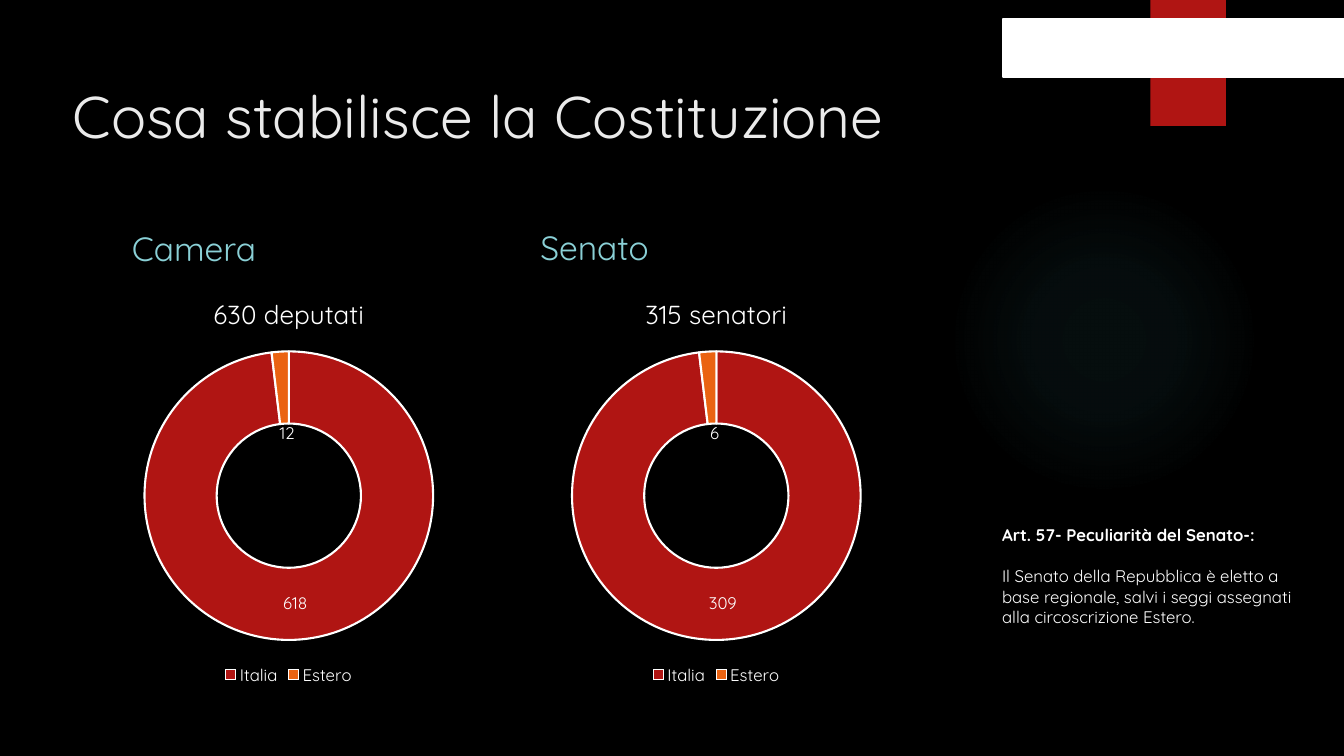
import pptx
import pptx.util
import pptx.oxml
import pptx.oxml.ns
import pptx.dml.color
import pptx.chart.data
import pptx.enum.chart
import pptx.enum.shapes
import pptx.enum.text

Inches = pptx.util.Inches
Pt = pptx.util.Pt
SHAPE = pptx.enum.shapes.MSO_SHAPE
ANCHOR = pptx.enum.text.MSO_ANCHOR
CHART_NS = pptx.oxml.ns.nsdecls("c")


def rgb(value):
    return pptx.dml.color.RGBColor.from_string(value)


class ConstitutionSlide:
    """Draws the elements of one dark slide in a shared style."""

    FONT = "Quicksand"
    WHITE, RED, ORANGE, TEAL, GLOW = "FFFFFF", "B01513", "EA6312", "8AD0D6", "50B9C1"

    def __init__(self, presentation):
        self.slide = presentation.slides.add_slide(presentation.slide_layouts[5])
        background = self.slide.background.fill
        background.solid()
        background.fore_color.rgb = rgb("000000")

    def style(self, font, size, color, bold=False):
        font.name, font.size, font.bold = self.FONT, Pt(size), bold
        font.color.rgb = rgb(color)

    def title(self, text, left, top, width, height):
        title = self.slide.shapes.title
        title.left, title.top = Inches(left), Inches(top)
        title.width, title.height = Inches(width), Inches(height)
        frame = title.text_frame
        frame.text = text
        frame.auto_size = pptx.enum.text.MSO_AUTO_SIZE.NONE
        frame.vertical_anchor = ANCHOR.TOP
        frame.paragraphs[0].alignment = pptx.enum.text.PP_ALIGN.LEFT
        self.style(frame.paragraphs[0].font, 42, "EBEBEB")

    def shape(self, kind, left, top, width, height, color):
        shape = self.slide.shapes.add_shape(
            kind, Inches(left), Inches(top), Inches(width), Inches(height))
        shape.shadow.inherit = False
        shape.fill.solid()
        shape.fill.fore_color.rgb = rgb(color)
        shape.line.fill.background()
        return shape

    def glow(self, left, top, size):
        circle = self.shape(SHAPE.OVAL, left, top, size, size, self.GLOW)
        stops = "".join(
            f'<a:gs pos="{position}000"><a:srgbClr val="{self.GLOW}">'
            f'<a:alpha val="{alpha}000"/></a:srgbClr></a:gs>'
            for position, alpha in ((0, 7), (36, 6), (69, 0)))
        gradient = pptx.oxml.parse_xml(
            f'<a:gradFill {pptx.oxml.ns.nsdecls("a")}><a:gsLst>{stops}</a:gsLst>'
            '<a:path path="circle"><a:fillToRect l="50000" t="50000" r="50000" b="50000"/>'
            '</a:path></a:gradFill>')
        properties = circle.element.spPr
        solid = properties.find(pptx.oxml.ns.qn("a:solidFill"))
        properties.replace(solid, gradient)

    def text(self, lines, left, top, width, height, size, color, anchor=ANCHOR.TOP, gap=0):
        box = self.slide.shapes.add_textbox(
            Inches(left), Inches(top), Inches(width), Inches(height))
        frame = box.text_frame
        frame.word_wrap = True
        frame.vertical_anchor = anchor
        for index, (line, bold) in enumerate(lines):
            paragraph = frame.add_paragraph() if index else frame.paragraphs[0]
            paragraph.text = line
            if index:
                paragraph.space_before = Pt(gap)
            self.style(paragraph.font, size, color, bold)

    def doughnut(self, heading, seats, left, top, width, height):
        data = pptx.chart.data.CategoryChartData()
        data.categories = ["Italia", "Estero"]
        data.add_series(heading, seats)
        chart = self.slide.shapes.add_chart(
            pptx.enum.chart.XL_CHART_TYPE.DOUGHNUT,
            Inches(left), Inches(top), Inches(width), Inches(height), data).chart
        self.style(chart.font, 10, self.WHITE)
        chart.has_title = True
        chart.chart_title.text_frame.text = heading
        self.style(chart.chart_title.text_frame.paragraphs[0].font, 18.6, self.WHITE)
        chart.chart_title.include_in_layout = False
        chart.has_legend = True
        chart.legend.position = pptx.enum.chart.XL_LEGEND_POSITION.BOTTOM
        chart.legend.include_in_layout = False
        self.style(chart.legend.font, 12, self.WHITE)

        plot = chart.plots[0]
        plot.vary_by_categories = True
        ring = plot.series[0]
        for index, color in enumerate((self.RED, self.ORANGE)):
            point = ring.points[index].format
            point.fill.solid()
            point.fill.fore_color.rgb = rgb(color)
            point.line.color.rgb = rgb(self.WHITE)
            point.line.width = Pt(1.5)
        labels = ring.data_labels
        labels.show_value = True
        labels.show_percentage = False
        self.style(labels.font, 12, self.WHITE)
        self.style(ring.points[1].data_label.font, 12, self.WHITE)

        abroad = chart.element.find(".//" + pptx.oxml.ns.qn("c:dLbl"))
        abroad.insert(1, self.layout(x=0.01, y=0.11))
        hole = chart.element.find(".//" + pptx.oxml.ns.qn("c:holeSize"))
        hole.set("val", "75")
        area = chart.element.find(".//" + pptx.oxml.ns.qn("c:plotArea"))
        for previous in area.findall(pptx.oxml.ns.qn("c:layout")):
            area.remove(previous)
        area.insert(0, self.layout(
            layoutTarget="inner", xMode="edge", yMode="edge", x=0.2, y=0.18, w=0.6, h=0.7))

    def layout(self, **settings):
        values = "".join(f'<c:{key} val="{value}"/>' for key, value in settings.items())
        return pptx.oxml.parse_xml(
            f"<c:layout {CHART_NS}><c:manualLayout>{values}</c:manualLayout></c:layout>")


def main():
    presentation = pptx.Presentation()
    presentation.slide_width, presentation.slide_height = Inches(13.33), Inches(7.5)
    page = ConstitutionSlide(presentation)
    page.glow(9.41, 1.83, 3.08)
    page.shape(SHAPE.RECTANGLE, 11.41, 0, 0.75, 1.25, page.RED)
    band = page.shape(SHAPE.RECTANGLE, 9.95, 0.19, 3.38, 0.57, page.WHITE)
    band.line.color.rgb = rgb(page.WHITE)
    band.line.width = Pt(1.5)
    page.title("Cosa stabilisce la Costituzione", 0.62, 0.74, 10.29, 1.53)

    chambers = (
        ("Camera", 1.21, 2.08, "630 deputati", (618, 12), 0.46),
        ("Senato", 5.26, 2.07, "315 senatori", (309, 6), 4.7),
    )
    for name, name_left, name_top, heading, seats, chart_left in chambers:
        page.text([(name, False)], name_left, name_top, 4.81, 0.63, 24, page.TEAL, ANCHOR.BOTTOM)
        page.doughnut(heading, seats, chart_left, 2.75, 4.81, 4.09)

    article = [
        ("Art. 57- Peculiarità del Senato-:", True),
        ("Il Senato della Repubblica è eletto a base regionale, salvi i seggi "
         "assegnati alla circoscrizione Estero.", False),
    ]
    page.text(article, 9.84, 5.16, 3.19, 1.5, 12, page.WHITE, gap=15)
    presentation.save("out.pptx")


if __name__ == "__main__":
    main()
